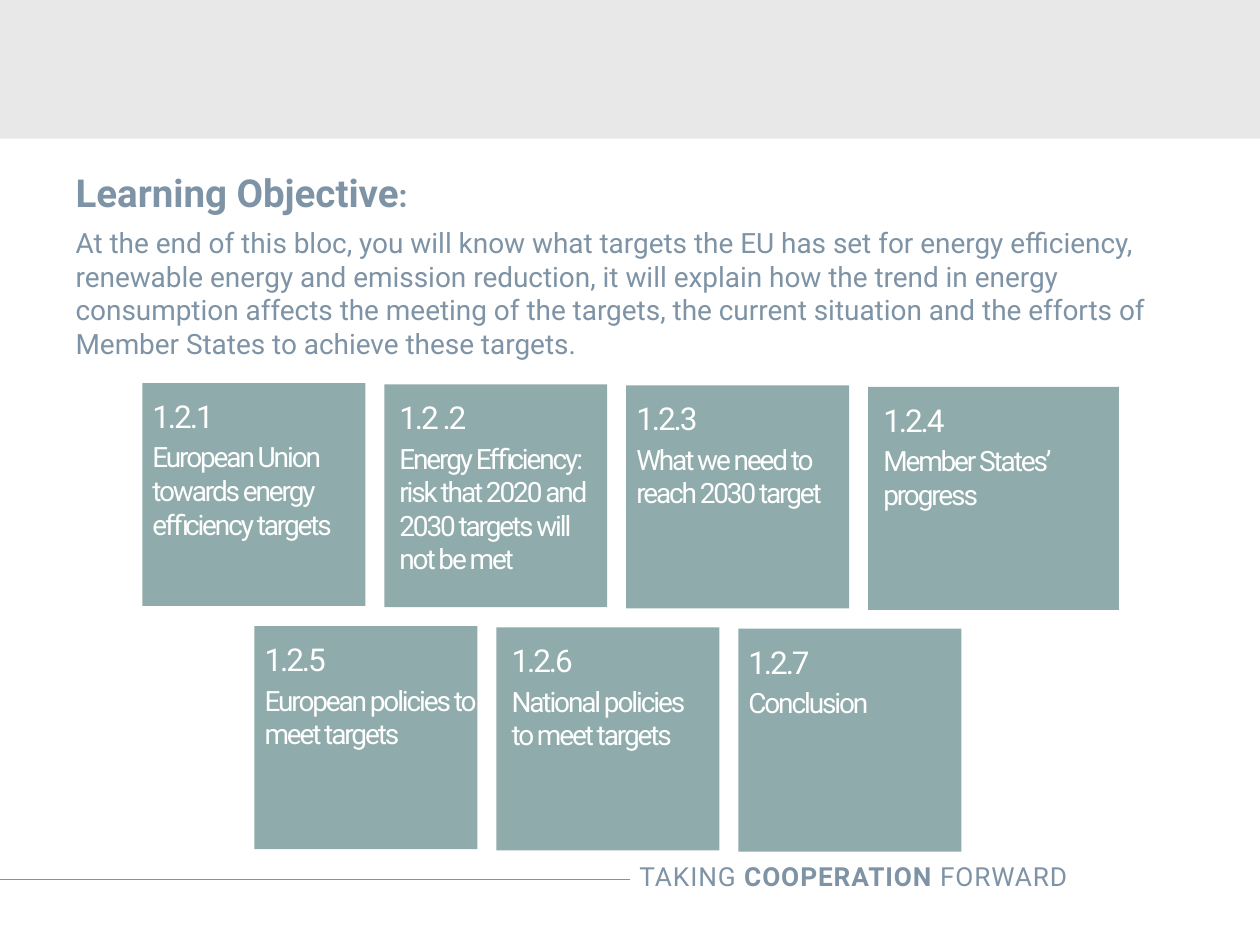
from dataclasses import dataclass

from lxml.etree import SubElement
from pptx import Presentation
from pptx.dml.color import RGBColor as Rgb
from pptx.enum.shapes import MSO_CONNECTOR as Line, MSO_SHAPE as Form
from pptx.enum.text import MSO_ANCHOR as Anchor, PP_ALIGN as Align
from pptx.oxml.ns import qn
from pptx.util import Inches, Pt

COLS, ROWS = 10, 7.5  # one grid cell is one inch square


@dataclass(frozen=True)
class Theme:
    font: str = "Roboto"
    slate: str = "7E93A5"
    sage: str = "90ABAB"
    pale: str = "E8E8E8"
    white: str = "FFFFFF"
    title: int = 22
    head: int = 18
    body: int = 16
    foot: int = 15
    tight: float = -1.2
    loose: float = 0.5


class Page:
    def __init__(self, deck, theme):
        self.theme = theme
        self.slide = deck.slides.add_slide(deck.slide_layouts[6])
        self.shapes = self.slide.shapes

    def rect(self, x, y, w, h, fill):
        box = self.shapes.add_shape(
            Form.RECTANGLE, Inches(x), Inches(y), Inches(w), Inches(h))
        box.shadow.inherit = False
        box.fill.solid()
        box.fill.fore_color.rgb = Rgb.from_string(fill)
        box.line.fill.background()
        return box

    def rule(self, x, y, end):
        line = self.shapes.add_connector(
            Line.STRAIGHT, Inches(x), Inches(y), Inches(end), Inches(y))
        line.line.color.rgb = Rgb.from_string(self.theme.slate)
        line.line.width = Pt(0.75)
        SubElement(line._element.spPr, qn("a:effectLst"))

    def text(self, x, y, w, h, paras, color, **style):
        box = self.shapes.add_textbox(
            Inches(x), Inches(y), Inches(w), Inches(h))
        self.set_text(box, paras, color, **style)

    def set_text(self, box, paras, color, inset, gap=0, spc=0,
                 align=Align.LEFT):
        """Fill a box; each paragraph is a list of (words, size, bold) runs."""
        frame = box.text_frame
        frame.word_wrap = True
        frame.vertical_anchor = Anchor.TOP
        (frame.margin_left, frame.margin_top,
         frame.margin_right, frame.margin_bottom) = map(Inches, inset)
        for i, runs in enumerate(paras):
            para = frame.add_paragraph() if i else frame.paragraphs[0]
            para.alignment = align
            if i:
                para.space_before = Pt(gap)
            for words, size, bold in runs:
                run = para.add_run()
                run.text = words
                font = run.font
                font.name, font.size, font.bold = (
                    self.theme.font, Pt(size), bold)
                font.color.rgb = Rgb.from_string(color)
                if spc:
                    run._r.get_or_add_rPr().set("spc", str(round(spc * 100)))

    def card(self, x, y, w, h, label, topic, inset):
        look = self.theme
        box = self.rect(x, y, w, h, look.sage)
        paras = [[(label, look.head, False)], [(topic, look.body, False)]]
        self.set_text(box, paras, look.white, inset, gap=3, spc=look.tight)


CARDS = [
    (1.13, 3.04, [
        ("1.2.1", "European Union towards energy efficiency targets"),
        ("1.2 .2", "Energy Efficiency: risk that 2020 and 2030 targets "
                   "will not be met"),
        ("1.2.3", "What we need to reach 2030 target"),
        ("1.2.4", "Member States’ progress"),
    ]),
    (2.02, 4.97, [
        ("1.2.5", "European policies to meet targets"),
        ("1.2.6", "National policies to meet targets"),
        ("1.2.7", "Conclusion"),
    ]),
]
SIDE, WIDE, PITCH, DRIFT = 1.77, 1.99, 1.92, 0.01
INSETS = [(0.08, 0.11, 0, 0.12), (0.12, 0.11, 0.12, 0.12)]

GOAL = ("At the end of this bloc, you will know what targets the EU has set "
        "for energy efficiency, renewable energy and emission reduction, it "
        "will explain how the trend in energy consumption affects the meeting "
        "of the targets, the current situation and the efforts of Member "
        "States to achieve these targets.")


def main():
    deck = Presentation()
    deck.slide_width, deck.slide_height = Inches(COLS), Inches(ROWS)
    look = Theme()
    page = Page(deck, look)

    page.rule(0, 6.98, COLS / 2)
    page.rect(0, 0, COLS, 1.1, look.pale)
    motto = [("TAKING ", look.foot, False), ("COOPERATION", look.foot, True),
             (" FORWARD", look.foot, False)]
    page.text(3.88, 6.78, 4.69, 0.35, [motto], look.slate,
              inset=(0.1, 0.05, 0.1, 0.05), spc=look.loose, align=Align.RIGHT)

    title = [("Learning Objective", look.title, True), (":", look.head, True)]
    page.text(0.52, 1.3, 9.15, 1.62, [title, [(GOAL, look.body, False)]],
              look.slate, inset=(0.08, 0.04, 0.08, 0.04), gap=6)

    for left, top, row in CARDS:
        for col, (label, topic) in enumerate(row):
            width = WIDE if col == 3 else SIDE
            page.card(left + col * PITCH, top + col * DRIFT, width, SIDE,
                      label, topic, INSETS[col % 2])

    deck.save("out.pptx")


if __name__ == "__main__":
    main()
